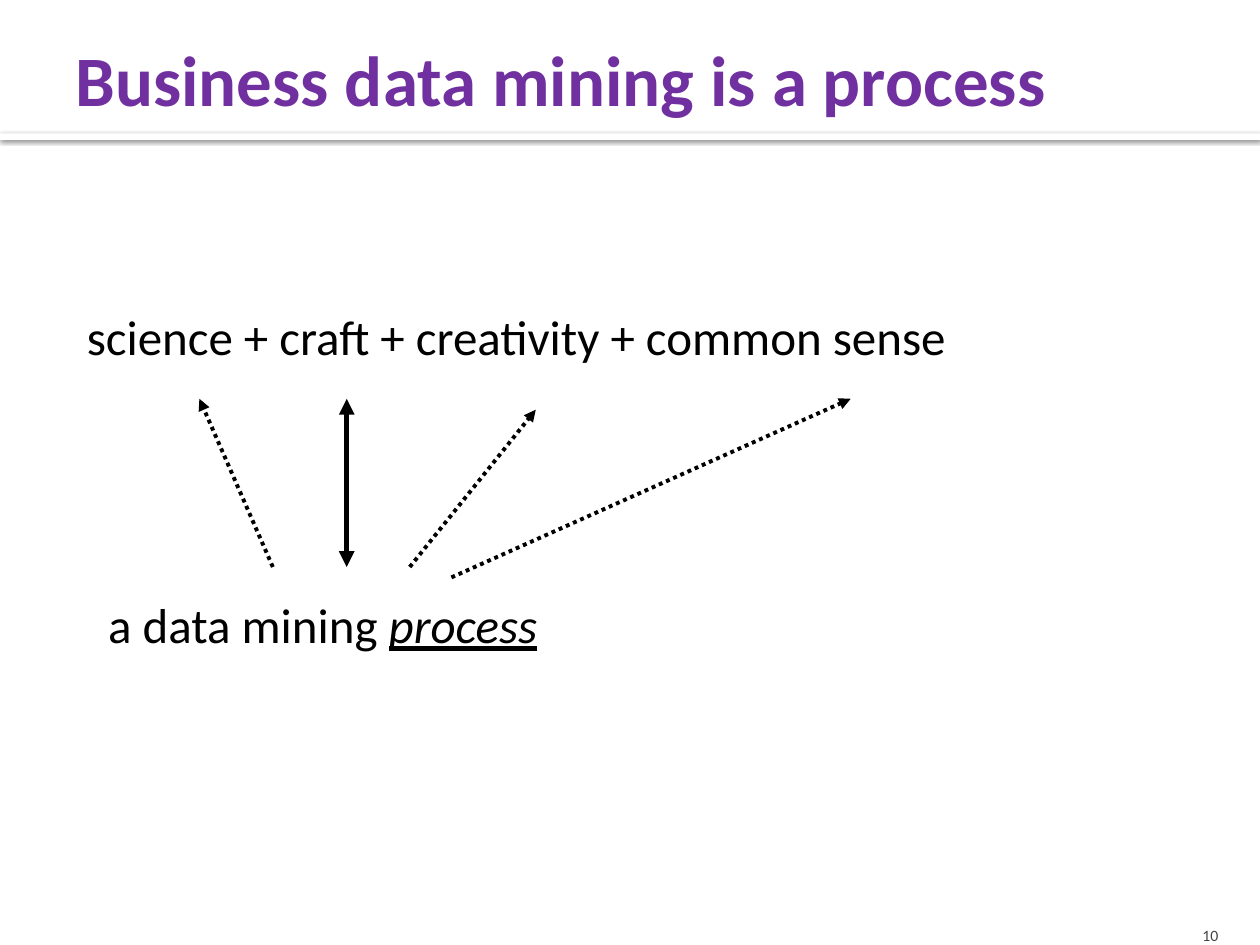
from dataclasses import dataclass, field

from lxml import etree
from pptx import Presentation
from pptx.dml.color import RGBColor
from pptx.enum.dml import MSO_LINE_DASH_STYLE as Dash
from pptx.enum.shapes import MSO_CONNECTOR as Conn, MSO_SHAPE as Shape
from pptx.enum.text import MSO_ANCHOR as Anchor, MSO_AUTO_SIZE as AutoSize, PP_ALIGN as Align
from pptx.oxml.ns import qn
from pptx.util import Cm, Pt

BLACK, WHITE, PURPLE, GREY = "000000", "FFFFFF", "7030A0", "454545"


@dataclass
class Label:
    """Text box; lengths in cm, runs as (text, extra font values)."""
    box: tuple
    runs: list
    size: float = 28
    color: str = BLACK
    margins: tuple = (0.25, 0.13, 0.25, 0.13)
    frame: dict = field(default_factory=dict)
    align: Align = Align.LEFT
    indent: tuple = (0, 0)


@dataclass
class Arrow:
    """Line from start to end in cm, with an arrowhead at the end."""
    start: tuple
    end: tuple
    width: float = 2.25
    dash: Dash | None = Dash.ROUND_DOT
    both: bool = False


def rgb(color: str) -> RGBColor:
    return RGBColor.from_string(color)


def set_all(obj, values: dict) -> None:
    for name, value in values.items():
        setattr(obj, name, value)


def add_label(s, label: Label) -> None:
    tf = s.shapes.add_textbox(*map(Cm, label.box)).text_frame
    sides = ("margin_left", "margin_top", "margin_right", "margin_bottom")
    set_all(tf, {"word_wrap": True, **dict(zip(sides, map(Cm, label.margins))), **label.frame})
    p = tf.paragraphs[0]
    p.alignment = label.align
    left, first = label.indent
    if left:
        pPr = p._p.get_or_add_pPr()
        pPr.set("marL", str(Cm(left)))
        pPr.set("indent", str(Cm(first)))
    for text, extra in label.runs:
        r = p.add_run()
        r.text = text
        set_all(r.font, {"name": "Calibri", "size": Pt(label.size), **extra})
        r.font.color.rgb = rgb(label.color)


def add_arrow(s, arrow: Arrow) -> None:
    line = s.shapes.add_connector(Conn.STRAIGHT, *map(Cm, arrow.start + arrow.end))
    line.line.color.rgb = rgb(BLACK)
    line.line.width = Pt(arrow.width)
    if arrow.dash:
        line.line.dash_style = arrow.dash
    ln = line.line._get_or_add_ln()
    for end in ("a:headEnd", "a:tailEnd") if arrow.both else ("a:tailEnd",):
        etree.SubElement(ln, qn(end), type="triangle")
    etree.SubElement(line._element.spPr, qn("a:effectLst"))


def add_title_rule(s) -> None:
    sp = s.shapes.add_shape(Shape.RECTANGLE, 0, Cm(2.69), Cm(25.4), Cm(0.13))
    sp.shadow.inherit = False
    sp.fill.solid()
    sp.fill.fore_color.rgb = rgb(WHITE)
    sp.line.fill.background()
    effects = sp._element.spPr.find(qn("a:effectLst"))
    shadow = etree.SubElement(effects, qn("a:outerShdw"), blurRad=str(Pt(2.5)),
                              dist=str(Pt(0.8)), dir="5400000", rotWithShape="0")
    color = etree.SubElement(shadow, qn("a:srgbClr"), val=BLACK)
    etree.SubElement(color, qn("a:alpha"), val="60000")


LABELS = [
    Label((1.27, 0.2, 22.86, 2.74), [("Business data mining is a process", {"bold": True})],
          size=40.5, color=PURPLE, margins=(0.25, 0.13, 0.13, 0.13),
          frame={"vertical_anchor": Anchor.MIDDLE}),
    Label((1.27, 5.92, 22.86, 9.88), [("science + craft + creativity + common sense", {})],
          margins=(0.15, 0.25, 0.25, 0.13), indent=(1.22, -0.89)),
    Label((1.93, 11.86, 9.3, 2.64),
          [("a data mining ", {}), ("process", {"italic": True, "underline": True})],
          frame={"word_wrap": False, "auto_size": AutoSize.SHAPE_TO_FIT_TEXT}),
    Label((22.78, 18.29, 2.03, 0.76), [("10", {})], size=9, color=GREY,
          margins=(0.25, 0.13, 0.25, 0), frame={"vertical_anchor": Anchor.BOTTOM},
          align=Align.RIGHT),
]

ARROWS = [
    Arrow((6.99, 8.04), (6.99, 11.43), width=3, dash=None, both=True),
    Arrow((5.5, 11.43), (4.02, 8.04)),
    Arrow((8.26, 11.43), (10.8, 8.26)),
    Arrow((9.1, 11.64), (17.15, 8.04)),
]


def main() -> None:
    prs = Presentation()
    prs.slide_width, prs.slide_height = Cm(25.4), Cm(19.05)
    s = prs.slides.add_slide(prs.slide_layouts[6])

    # Rule under the title
    add_title_rule(s)
    # Title, ingredients, process and page number
    for label in LABELS:
        add_label(s, label)
    # Links between the process and its ingredients
    for arrow in ARROWS:
        add_arrow(s, arrow)

    prs.save("out.pptx")


if __name__ == "__main__":
    main()
